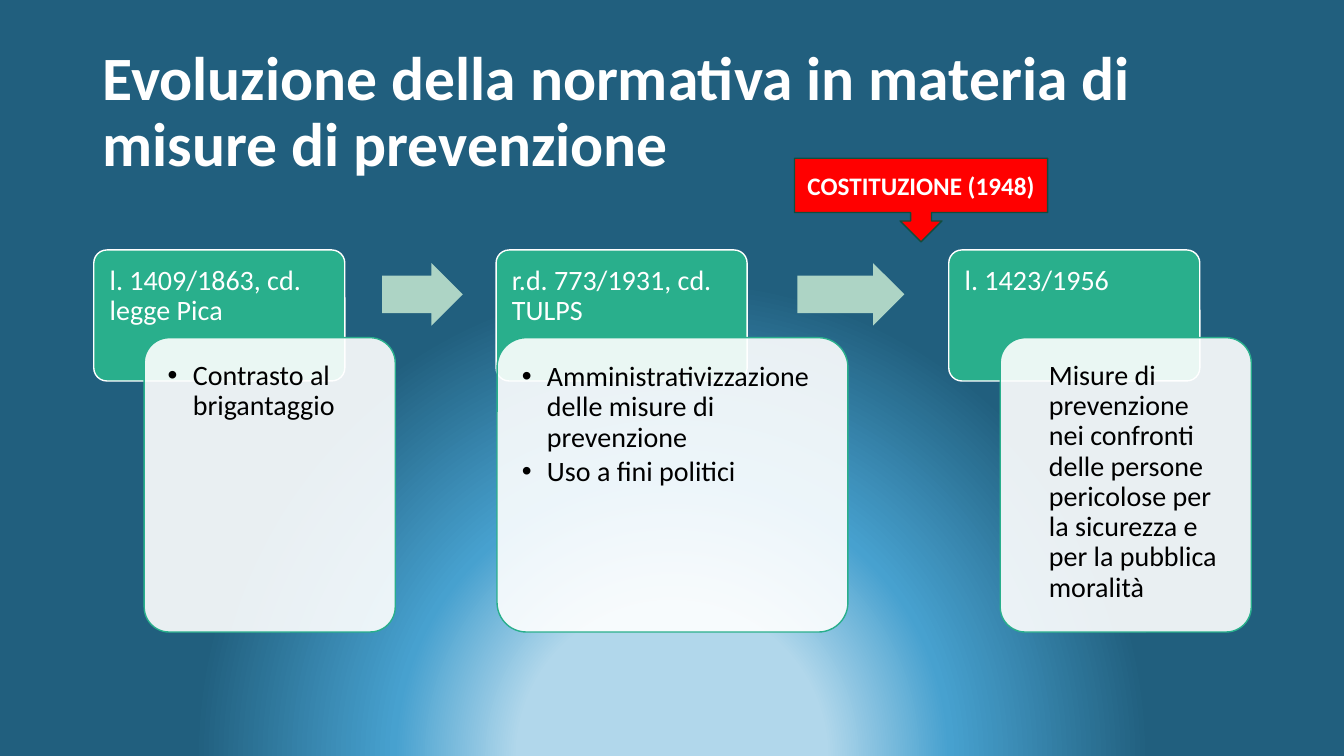
from lxml.etree import SubElement
from pptx import Presentation
from pptx.dml.color import RGBColor
from pptx.enum.shapes import MSO_SHAPE
from pptx.enum.text import MSO_ANCHOR, PP_ALIGN
from pptx.oxml import parse_xml
from pptx.oxml.ns import nsdecls, qn
from pptx.util import Inches, Pt

WHITE, BLACK, GREEN, PALE_GREEN = "FFFFFF", "000000", "29AF8C", "ADD4C5"
TOP_HEADER, TOP_CARD = 2.48, 3.35
HEADER_WIDTH = 2.49


def add_block(kind, box, fill, line=None, adjustments=(), inset=0.1):
    """Add a preset shape without shadow, with its text frame ready to fill."""
    block = slide.shapes.add_shape(kind, *[Inches(length) for length in box])
    block.shadow.inherit = False
    block.fill.solid()
    block.fill.fore_color.rgb = RGBColor.from_string(fill)
    if line:
        block.line.color.rgb = RGBColor.from_string(line)
        block.line.width = Pt(1)
    else:
        block.line.fill.background()
    for index, value in enumerate(adjustments):
        block.adjustments[index] = value
    frame = block.text_frame
    frame.word_wrap = True
    frame.vertical_anchor = MSO_ANCHOR.TOP
    frame.margin_left = frame.margin_right = Inches(inset)
    frame.margin_top = frame.margin_bottom = Inches(inset)
    return block


def write(paragraph, text, size, color, bold=False, align=PP_ALIGN.LEFT, spacing=0.9):
    paragraph.alignment = align
    paragraph.line_spacing = spacing
    run = paragraph.add_run()
    run.text = text
    run.font.name = "Calibri"
    run.font.size = Pt(size)
    run.font.bold = bold
    run.font.color.rgb = RGBColor.from_string(color)


prs = Presentation()
prs.slide_width, prs.slide_height = Inches(13.33), Inches(7.5)
slide = prs.slides.add_slide(prs.slide_layouts[6])

# Radial background centred below the bottom edge
stops = "".join(
    f'<a:gs pos="{position * 1000}"><a:srgbClr val="{color}"/></a:gs>'
    for position, color in [(20, "B1D7EB"), (36, "47A1CF"), (62, "215F7E")]
)
slide.element.cSld.insert(0, parse_xml(
    f'<p:bg {nsdecls("p", "a")}><p:bgPr><a:gradFill rotWithShape="1">'
    f'<a:gsLst>{stops}</a:gsLst><a:path path="circle">'
    '<a:fillToRect l="50000" t="130000" r="50000" b="-30000"/></a:path>'
    '</a:gradFill><a:effectLst/></p:bgPr></p:bg>'
))

title = slide.shapes.add_textbox(Inches(0.92), Inches(0.4), Inches(11.5), Inches(1.45))
title.text_frame.word_wrap = True
title.text_frame.vertical_anchor = MSO_ANCHOR.MIDDLE
write(title.text_frame.paragraphs[0],
      "Evoluzione della normativa in materia di misure di prevenzione",
      44, WHITE, bold=True)

# Header left, card left, card width, law, effects, bulleted
stages = [
    (0.93, 1.43, 2.49, "l. 1409/1863, cd. legge Pica",
     ["Contrasto al brigantaggio"], True),
    (4.92, 4.93, 3.48, "r.d. 773/1931, cd. TULPS",
     ["Amministrativizzazione delle misure di prevenzione", "Uso a fini politici"], True),
    (9.41, 9.92, 2.49, "l. 1423/1956",
     ["Misure di prevenzione nei confronti delle persone pericolose "
      "per la sicurezza e per la pubblica moralità"], False),
]
for header_left, card_left, card_width, law, effects, bulleted in stages:
    header = add_block(MSO_SHAPE.ROUNDED_RECTANGLE,
                       (header_left, TOP_HEADER, HEADER_WIDTH, 1.3),
                       GREEN, WHITE, [0.1], 0.12)
    write(header.text_frame.paragraphs[0], law, 20, WHITE)

    card = add_block(MSO_SHAPE.ROUNDED_RECTANGLE,
                     (card_left, TOP_CARD, card_width, 2.92),
                     WHITE, GREEN, [0.1], 0.16)
    card_color = card.element.spPr.find(qn("a:solidFill")).find(qn("a:srgbClr"))
    SubElement(card_color, qn("a:alpha"), val="90000")
    for index, effect in enumerate(effects):
        frame = card.text_frame
        paragraph = frame.add_paragraph() if index else frame.paragraphs[0]
        write(paragraph, effect, 20, BLACK)
        paragraph.space_after = Pt(3)
        properties = paragraph._p.get_or_add_pPr()
        properties.set("marL", str(Inches(0.25)))
        if bulleted:
            properties.set("indent", str(-Inches(0.25)))
            SubElement(properties, qn("a:buFont"), typeface="Arial")
            SubElement(properties, qn("a:buChar"), char="•")

for arrow_left, arrow_width in [(3.79, 0.8), (7.91, 1.06)]:
    add_block(MSO_SHAPE.RIGHT_ARROW, (arrow_left, 2.61, arrow_width, 0.62),
              PALE_GREEN, adjustments=[0.6, 0.5])

constitution = add_block(MSO_SHAPE.DOWN_ARROW_CALLOUT, (7.88, 1.57, 2.51, 0.83),
                         "FF0000", "124D3D", inset=0.05)
constitution.text_frame.vertical_anchor = MSO_ANCHOR.MIDDLE
write(constitution.text_frame.paragraphs[0], "COSTITUZIONE (1948)", 18, WHITE,
      bold=True, align=PP_ALIGN.CENTER, spacing=1.0)

prs.save("out.pptx")
